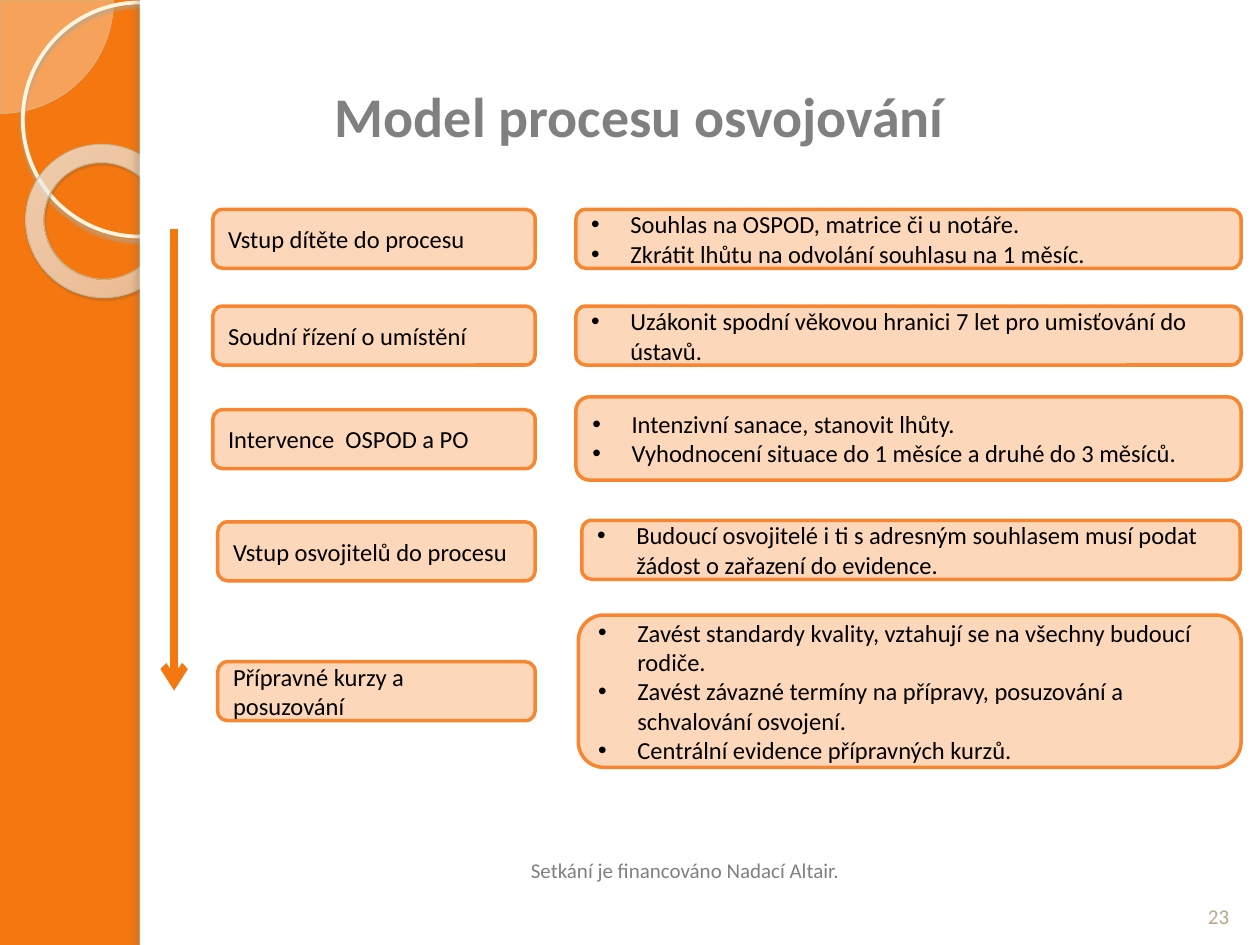
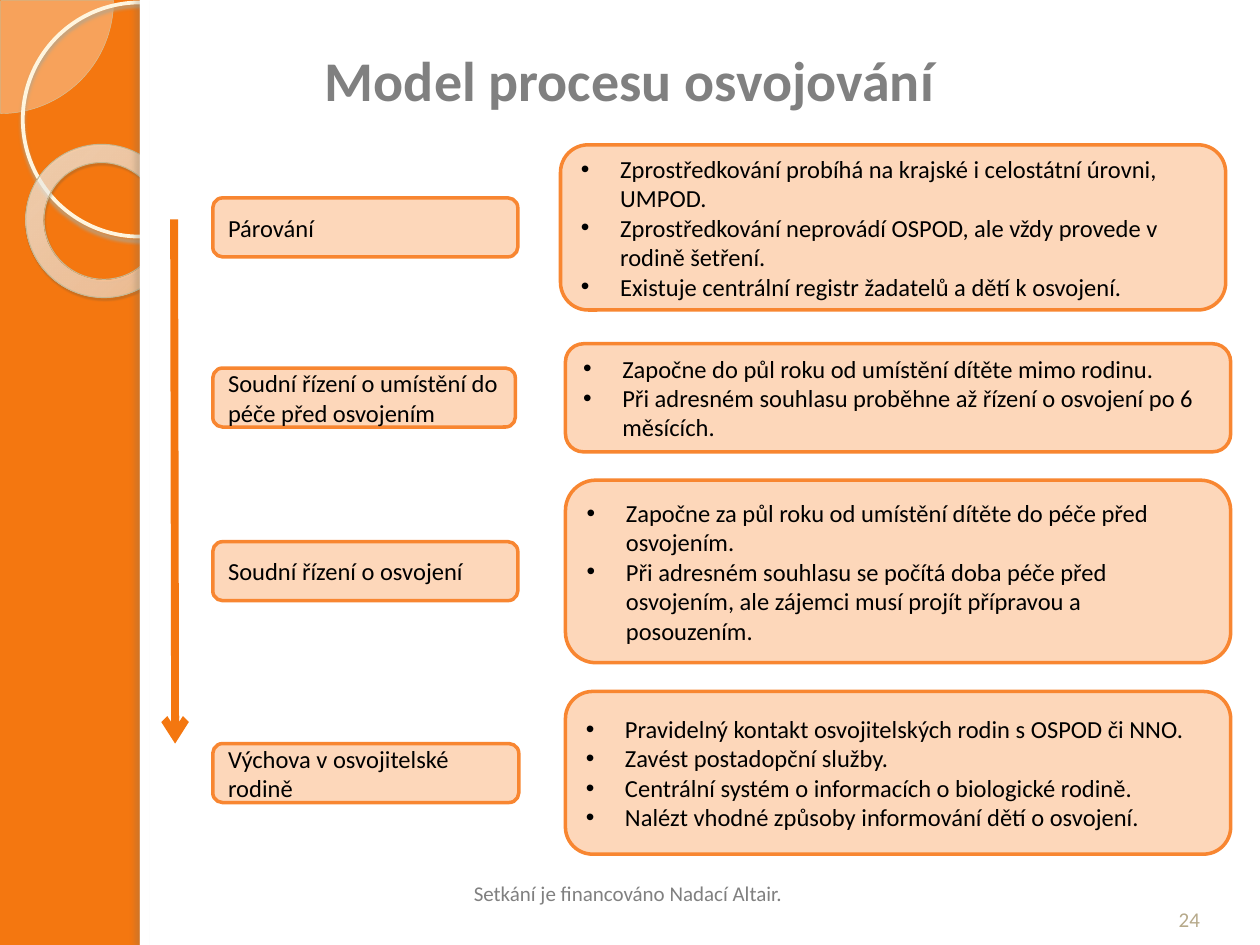
import dataclasses

import pptx
import pptx.dml.color
import pptx.enum.shapes
import pptx.enum.text
import pptx.oxml
import pptx.oxml.ns
import pptx.util

Cm = pptx.util.Cm
Pt = pptx.util.Pt
Shape = pptx.enum.shapes.MSO_SHAPE
Align = pptx.enum.text.PP_ALIGN
Anchor = pptx.enum.text.MSO_ANCHOR

SLIDE_WIDTH, SLIDE_HEIGHT = 25.4, 19.05
BAND_WIDTH = 2.82
STEP_HEIGHT = 1.19
BULLET_INDENT = 0.79


@dataclasses.dataclass(frozen=True)
class Theme:
    font: str = "Calibri"
    orange: str = "F47710"
    box_fill: str = "FDD7BA"
    box_line: str = "F88631"
    white: str = "FFFFFF"
    black: str = "000000"
    grey: str = "808080"
    number: str = "B6A98A"
    pie_fill: str = "FEFAF4"
    pie_line: str = "D3C39F"
    circle_line: str = "FFF5DE"
    ring_line: str = "C7B893"
    # Gradient stops: position %, colour, opacity %
    ring_stops: tuple = ((0, "FFFCF6", 70), (70, "FFFEFB", 55), (100, "F0D28E", 60))
    # Shadows: colour, opacity %, blur pt, distance pt, direction in degrees
    circle_shadow: tuple = ("B0A68F", 85, 2, 2, 90)
    ring_shadow: tuple = ("5A5444", 35, 1, 1.2, 75)
    edge_shadow: tuple = ("736F63", 25, 3, 3, 180)
    title_size: int = 32
    body_size: int = 14
    footer_size: int = 12


@dataclasses.dataclass(frozen=True)
class Step:
    """One row: label at (left, top, width), details at (left, top, width, height)."""
    label: str
    label_place: tuple
    detail_place: tuple
    points: tuple


@dataclasses.dataclass(frozen=True)
class ProcessSlide:
    number: int
    title_place: tuple
    footer_place: tuple
    number_place: tuple
    arrow: tuple
    steps: tuple


TITLE = "Model procesu osvojování"
FOOTER = "Setkání je financováno Nadací Altair."

PROCESS_SLIDES = (
    ProcessSlide(
        23, (6.5, 0.74, 14.91, 3.18), (8.31, 16.61, 11, 1.32),
        (23.93, 17.53, 1.27, 1.32), (3.51, 4.62, 3.51, 13.92),
        (
            Step("Vstup dítěte do procesu",
                 (4.29, 4.22, 6.5), (11.61, 4.22, 13.41, STEP_HEIGHT),
                 ("Souhlas na OSPOD, matrice či u notáře.",
                  "Zkrátit lhůtu na odvolání souhlasu na 1 měsíc.")),
            Step("Soudní řízení o umístění",
                 (4.29, 6.17, 6.5), (11.61, 6.17, 13.41, STEP_HEIGHT),
                 ("Uzákonit spodní věkovou hranici 7 let pro umisťování do ústavů.",)),
            Step("Intervence  OSPOD a PO",
                 (4.29, 8.26, 6.5), (11.61, 8, 13.41, 1.68),
                 ("Intenzivní sanace, stanovit lhůty.",
                  "Vyhodnocení situace do 1 měsíce a druhé do 3 měsíců.")),
            Step("Vstup osvojitelů do procesu",
                 (4.39, 10.52, 6.4), (11.73, 10.49, 13.27, STEP_HEIGHT),
                 ("Budoucí osvojitelé i ti s adresným souhlasem musí podat "
                  "žádost o zařazení do evidence.",)),
            Step("Přípravné kurzy a posuzování",
                 (4.39, 13.34, 6.4), (11.66, 12.4, 13.36, 3.07),
                 ("Zavést standardy kvality, vztahují se na všechny budoucí rodiče.",
                  "Zavést závazné termíny na přípravy, posuzování a schvalování osvojení.",
                  "Centrální evidence přípravných kurzů.")),
        ),
    ),
    ProcessSlide(
        24, (6.3, 0, 15.42, 3.18), (7.16, 17.07, 11, 1.32),
        (23.34, 17.58, 1.27, 1.32), (3.51, 4.42, 3.53, 14.99),
        (
            Step("Párování",
                 (4.29, 3.99, 6.15), (11.3, 2.92, 13.41, 3.33),
                 ("Zprostředkování probíhá na krajské i celostátní úrovni, UMPOD.",
                  "Zprostředkování neprovádí OSPOD, ale vždy provede v rodině šetření.",
                  "Existuje centrální registr žadatelů a dětí k osvojení.")),
            Step("Soudní řízení o umístění do péče před osvojením",
                 (4.29, 7.42, 6.1), (11.4, 6.93, 13.41, 2.18),
                 ("Započne do půl roku od umístění dítěte mimo rodinu.",
                  "Při adresném souhlasu proběhne až řízení o osvojení po 6 měsících.")),
            Step("Soudní řízení o osvojení",
                 (4.29, 10.92, 6.15), (11.4, 9.68, 13.41, 3.68),
                 ("Započne za půl roku od umístění dítěte do péče před osvojením.",
                  "Při adresném souhlasu se počítá doba péče před osvojením, "
                  "ale zájemci musí projít přípravou a posouzením.")),
            Step("Výchova v osvojitelské rodině",
                 (4.29, 14.99, 6.17), (11.4, 13.94, 13.41, 3.28),
                 ("Pravidelný kontakt osvojitelských rodin s OSPOD či NNO.",
                  "Zavést postadopční služby.",
                  "Centrální systém o informacích o biologické rodině.",
                  "Nalézt vhodné způsoby informování dětí o osvojení.")),
        ),
    ),
)


def rgb(color):
    return pptx.dml.color.RGBColor.from_string(color)


def drawing_xml(tag, attributes="", content=""):
    namespace = pptx.oxml.ns.nsdecls("a")
    return pptx.oxml.parse_xml(f"<a:{tag} {namespace} {attributes}>{content}</a:{tag}>")


def color_xml(color, opacity):
    return f'<a:srgbClr val="{color}"><a:alpha val="{opacity * 1000}"/></a:srgbClr>'


class SlideBuilder:
    def __init__(self, presentation, theme):
        self.presentation = presentation
        self.theme = theme
        self.slide = None

    def start_slide(self):
        self.slide = self.presentation.slides.add_slide(self.presentation.slide_layouts[6])
        background = self.slide.background.fill
        background.solid()
        background.fore_color.rgb = rgb(self.theme.orange)
        self.side_band()

    def shape(self, kind, place, fill=None, line=None, line_width=1, shadow=None):
        shape = self.slide.shapes.add_shape(kind, *map(Cm, place))
        shape.shadow.inherit = False
        if fill:
            shape.fill.solid()
            shape.fill.fore_color.rgb = rgb(fill)
        else:
            shape.fill.background()
        if line:
            shape.line.color.rgb = rgb(line)
            shape.line.width = Pt(line_width)
        else:
            shape.line.fill.background()
        if shadow:
            self.cast_shadow(shape, *shadow)
        return shape

    def cast_shadow(self, shape, color, opacity, blur, distance, direction):
        attributes = (f'blurRad="{Pt(blur)}" dist="{Pt(distance)}" '
                      f'dir="{direction * 60000}" algn="tl" rotWithShape="0"')
        effects = shape.element.spPr.find(pptx.oxml.ns.qn("a:effectLst"))
        effects.append(drawing_xml("outerShdw", attributes, color_xml(color, opacity)))

    def replace_fill(self, shape, old_tag, new_fill):
        properties = shape.element.spPr
        properties.replace(properties.find(pptx.oxml.ns.qn(old_tag)), new_fill)

    def side_band(self):
        """Draw the circles on the orange band, then the white panel beside it."""
        theme = self.theme
        pie = self.shape(Shape.PIE, (-2.26, -2.26, 4.55, 4.55), theme.pie_fill,
                         theme.pie_line, 0.25)
        pie.adjustments[0] = 0
        pie.adjustments[1] = 54
        self.replace_fill(pie, "a:solidFill",
                          drawing_xml("solidFill", "", color_xml(theme.pie_fill, 33)))

        self.shape(Shape.OVAL, (0.46, 0.05, 4.72, 4.72), None,
                   theme.circle_line, 2.15, theme.circle_shadow)

        ring = self.shape(Shape.DONUT, (0.51, 2.92, 3.12, 3.07), None,
                          theme.ring_line, 0.58, theme.ring_shadow)
        ring.rotation = 38.6
        ring.adjustments[0] = 0.12
        stops = "".join(f'<a:gs pos="{position * 1000}">{color_xml(color, opacity)}</a:gs>'
                        for position, color, opacity in theme.ring_stops)
        center = '<a:fillToRect l="-408000" t="-50000" r="508000" b="150000"/>'
        self.replace_fill(ring, "a:noFill", drawing_xml(
            "gradFill", 'rotWithShape="1"',
            f'<a:gsLst>{stops}</a:gsLst><a:path path="circle">{center}</a:path>'))

        self.shape(Shape.RECTANGLE,
                   (BAND_WIDTH, 0, SLIDE_WIDTH - BAND_WIDTH, SLIDE_HEIGHT), theme.white)
        self.shape(Shape.RECTANGLE, (BAND_WIDTH, 0, 0.2, SLIDE_HEIGHT), theme.white,
                   shadow=theme.edge_shadow)

    def set_text(self, shape, lines, size, color, bold=False, align=Align.LEFT,
                 anchor=Anchor.MIDDLE, bulleted=False):
        frame = shape.text_frame
        frame.word_wrap = True
        frame.vertical_anchor = anchor
        frame.text = "\n".join(lines)
        for paragraph in frame.paragraphs:
            paragraph.alignment = align
            paragraph.font.name = self.theme.font
            paragraph.font.size = Pt(size)
            paragraph.font.bold = bold
            paragraph.font.color.rgb = rgb(color)
            if bulleted:
                self.add_bullet(paragraph)

    def add_bullet(self, paragraph):
        properties = paragraph._p.get_or_add_pPr()
        properties.set("marL", str(Cm(BULLET_INDENT)))
        properties.set("indent", str(-Cm(BULLET_INDENT)))
        properties.insert(0, drawing_xml("buFont", 'typeface="Arial"'))
        properties.insert(1, drawing_xml("buChar", 'char="•"'))

    def text(self, place, text, size, color, **style):
        box = self.slide.shapes.add_textbox(*map(Cm, place))
        self.set_text(box, [text], size, color, **style)

    def title(self, place, text):
        self.text(place, text, self.theme.title_size, self.theme.grey, bold=True)

    def footer(self, place, text, color):
        self.text(place, text, self.theme.footer_size, color,
                  align=Align.CENTER, anchor=Anchor.BOTTOM)

    def box(self, place, lines, bulleted=False):
        theme = self.theme
        box = self.shape(Shape.ROUNDED_RECTANGLE, place, theme.box_fill, theme.box_line, 2)
        self.set_text(box, lines, theme.body_size, theme.black, bulleted=bulleted)

    def arrow(self, ends):
        arrow = self.slide.shapes.add_connector(
            pptx.enum.shapes.MSO_CONNECTOR.STRAIGHT, *map(Cm, ends))
        arrow.line.color.rgb = rgb(self.theme.orange)
        arrow.line.width = Pt(4.5)
        properties = arrow.element.spPr
        line = properties.find(pptx.oxml.ns.qn("a:ln"))
        line.append(drawing_xml("tailEnd", 'type="arrow"'))
        properties.append(drawing_xml("effectLst"))

    def process_slide(self, content):
        self.start_slide()
        self.title(content.title_place, TITLE)
        self.footer(content.footer_place, FOOTER, self.theme.grey)
        self.footer(content.number_place, str(content.number), self.theme.number)
        for step in content.steps:
            self.box((*step.label_place, STEP_HEIGHT), [step.label])
        for step in content.steps:
            self.box(step.detail_place, step.points, bulleted=True)
        self.arrow(content.arrow)


def main():
    presentation = pptx.Presentation()
    presentation.slide_width = Cm(SLIDE_WIDTH)
    presentation.slide_height = Cm(SLIDE_HEIGHT)
    builder = SlideBuilder(presentation, Theme())
    for content in PROCESS_SLIDES:
        builder.process_slide(content)
    presentation.save("out.pptx")


if __name__ == "__main__":
    main()
